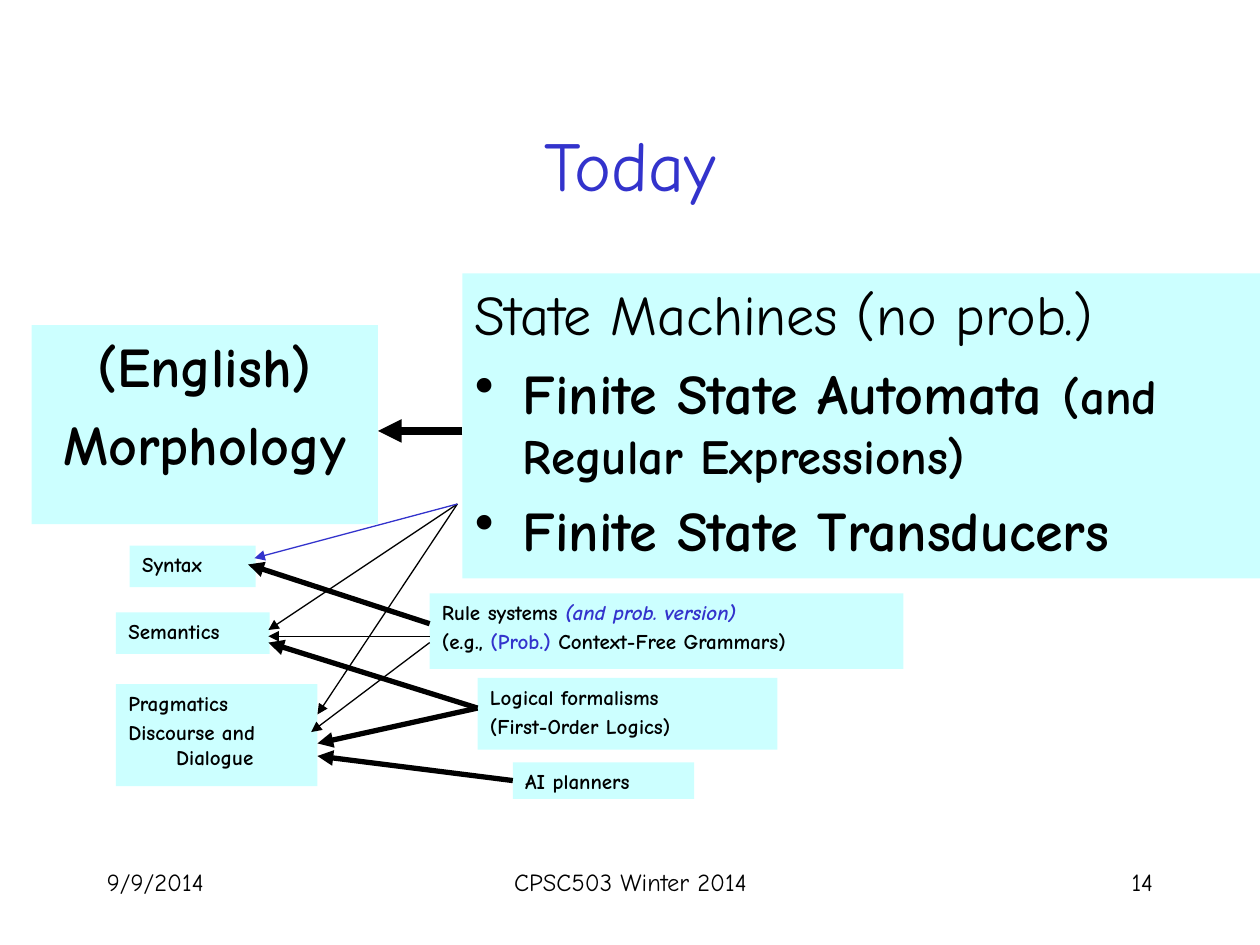
"""Builds the "Today" slide linking language levels to the formalisms that model them."""
from lxml import etree
from pptx import Presentation, util as u
from pptx.dml.color import RGBColor
from pptx.enum import shapes, text
from pptx.oxml import ns

COLORS = {"ink": "000000", "accent": "3333CC", "box": "CCFFFF"}
FONT = "Comic Neue"
LEFT, CENTER, RIGHT = text.PP_ALIGN.LEFT, text.PP_ALIGN.CENTER, text.PP_ALIGN.RIGHT


def style(font, size, bold=False, color="ink", italic=False):
    font.name, font.size = FONT, u.Pt(size)
    font.bold, font.italic = bold, italic
    font.color.rgb = RGBColor.from_string(COLORS[color])


def add_box(area, lines, size=12, bold=True, align=LEFT):
    box = slide.shapes.add_shape(shapes.MSO_SHAPE.RECTANGLE, *map(u.Inches, area))
    box.shadow.inherit = False
    box.fill.solid()
    box.fill.fore_color.rgb = RGBColor.from_string(COLORS["box"])
    box.line.fill.background()
    frame = box.text_frame
    frame.word_wrap = True
    frame.vertical_anchor = text.MSO_ANCHOR.TOP
    for index, runs in enumerate(lines):
        line = frame.add_paragraph() if index else frame.paragraphs[0]
        line.alignment = align
        line.space_before = u.Pt(round(size * 0.2, 1))
        style(line.font, size, bold)
        properties = line._p.get_or_add_pPr()
        properties.set("marL", str(u.Inches(0.38)))
        properties.set("indent", str(u.Inches(-0.38)))
        for words, changes in runs:
            run = line.add_run()
            run.text = words
            style(run.font, **{"size": size, "bold": bold, **changes})
    return box


deck = Presentation()
deck.slide_width, deck.slide_height = u.Inches(10), u.Inches(7.5)
slide = deck.slides.add_slide(deck.slide_layouts[5])

title = slide.shapes.title
title.left, title.top, title.width, title.height = map(u.Inches, (0.75, 0.67, 8.5, 1.25))
title.text_frame.text = "Today"
title.text_frame.vertical_anchor = text.MSO_ANCHOR.MIDDLE
title.text_frame.paragraphs[0].alignment = CENTER
style(title.text_frame.paragraphs[0].font, 40, color="accent")

for left, width, words, align in (
    (0.75, 2.08, "9/9/2014", LEFT),
    (3.42, 3.17, "CPSC503 Winter 2014", CENTER),
    (7.17, 2.08, "14", RIGHT),
):
    footer = slide.shapes.add_textbox(*map(u.Inches, (left, 6.83, width, 0.5))).text_frame
    footer.word_wrap = True
    footer.text = words
    footer.paragraphs[0].alignment = align
    style(footer.paragraphs[0].font, 14)

machines = add_box((3.67, 2.17, 6.33, 2.42), [
    [("State Machines (no prob.)", {"bold": False})],
    [("Finite State Automata ", {}), ("(and Regular Expressions)", {"size": 28})],
    [("Finite State Transducers", {})],
], size=32)
for machine in machines.text_frame.paragraphs[1:]:
    bullet = etree.SubElement(machine._p.get_or_add_pPr(), ns.qn("a:buChar"))
    bullet.set("char", "•")
    machine._p.pPr.remove(bullet)
    machine._p.pPr.find(ns.qn("a:spcBef")).addnext(bullet)

add_box((0.25, 2.58, 2.75, 1.58), [[("(English)", {})], [("Morphology", {})]], size=32, align=CENTER)
add_box((3.41, 4.71, 3.76, 0.6), [
    [("Rule systems ", {}), ("(and prob. version)", {"color": "accent", "italic": True})],
    [("(e.g., ", {}), ("(Prob.)", {"color": "accent"}), (" Context-Free Grammars)", {})],
])
for area, lines in (
    ((3.79, 5.38, 2.38, 0.57), ["Logical formalisms", "(First-Order Logics)"]),
    ((1.03, 4.33, 1, 0.33), ["Syntax"]),
    ((0.92, 5.43, 1.6, 0.81), ["Pragmatics", "Discourse and Dialogue"]),
    ((0.92, 4.86, 1.22, 0.33), ["Semantics"]),
):
    add_box(area, [[(words, {})] for words in lines])
planners = add_box((4.07, 6.05, 1.44, 0.29), [[("AI planners", {})]])

machines_exit, logic_exit, planners_exit = (3.63, 4), (3.79, 5.62), (4.07, 6.19)
for start, end, width, color in (
    ((3.67, 3.42), (3, 3.42), 4.5, "ink"),
    ((3.41, 4.95), (1.97, 4.48), 3, "ink"),
    (logic_exit, (2.13, 5.1), 3, "ink"),
    (logic_exit, (2.52, 5.9), 3, "ink"),
    (machines_exit, (2.13, 5), 0.75, "ink"),
    (machines_exit, (2.52, 5.67), 0.75, "ink"),
    ((3.41, 5.05), (2.13, 5.05), 0.75, "ink"),
    ((3.41, 5.1), (2.47, 5.81), 0.75, "ink"),
    (planners_exit, (2.52, 6), 3, "ink"),
    (machines_exit, (2.02, 4.43), 0.75, "accent"),
):
    arrow = slide.shapes.add_connector(shapes.MSO_CONNECTOR.STRAIGHT, *map(u.Inches, start + end))
    if start == planners_exit:
        arrow.begin_connect(planners, 1)
    arrow.line.width = u.Pt(width)
    arrow.line.color.rgb = RGBColor.from_string(COLORS[color])
    etree.SubElement(arrow.line._get_or_add_ln(), ns.qn("a:tailEnd")).set("type", "triangle")
    etree.SubElement(arrow._element.spPr, ns.qn("a:effectLst"))

deck.save("out.pptx")
